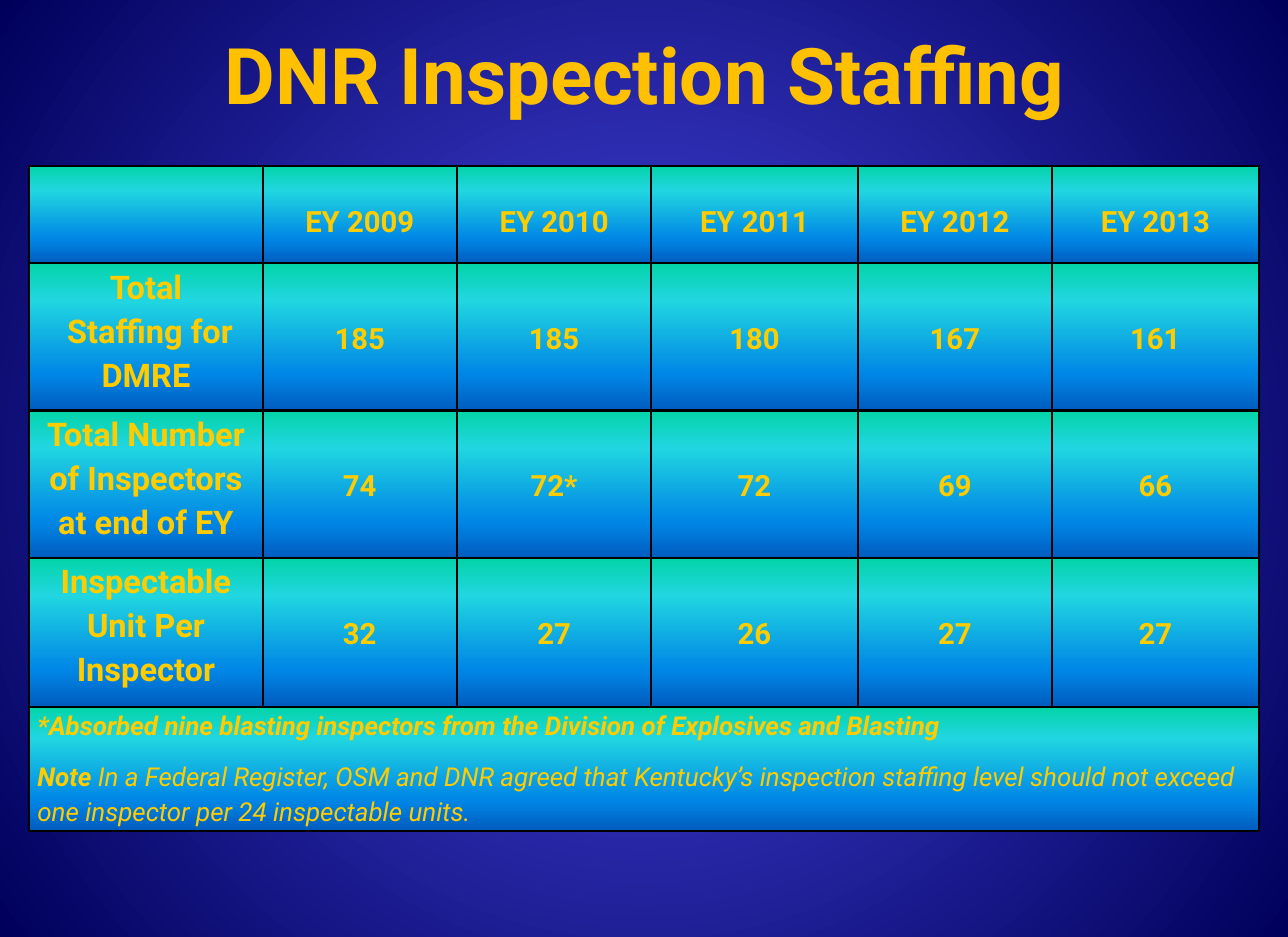
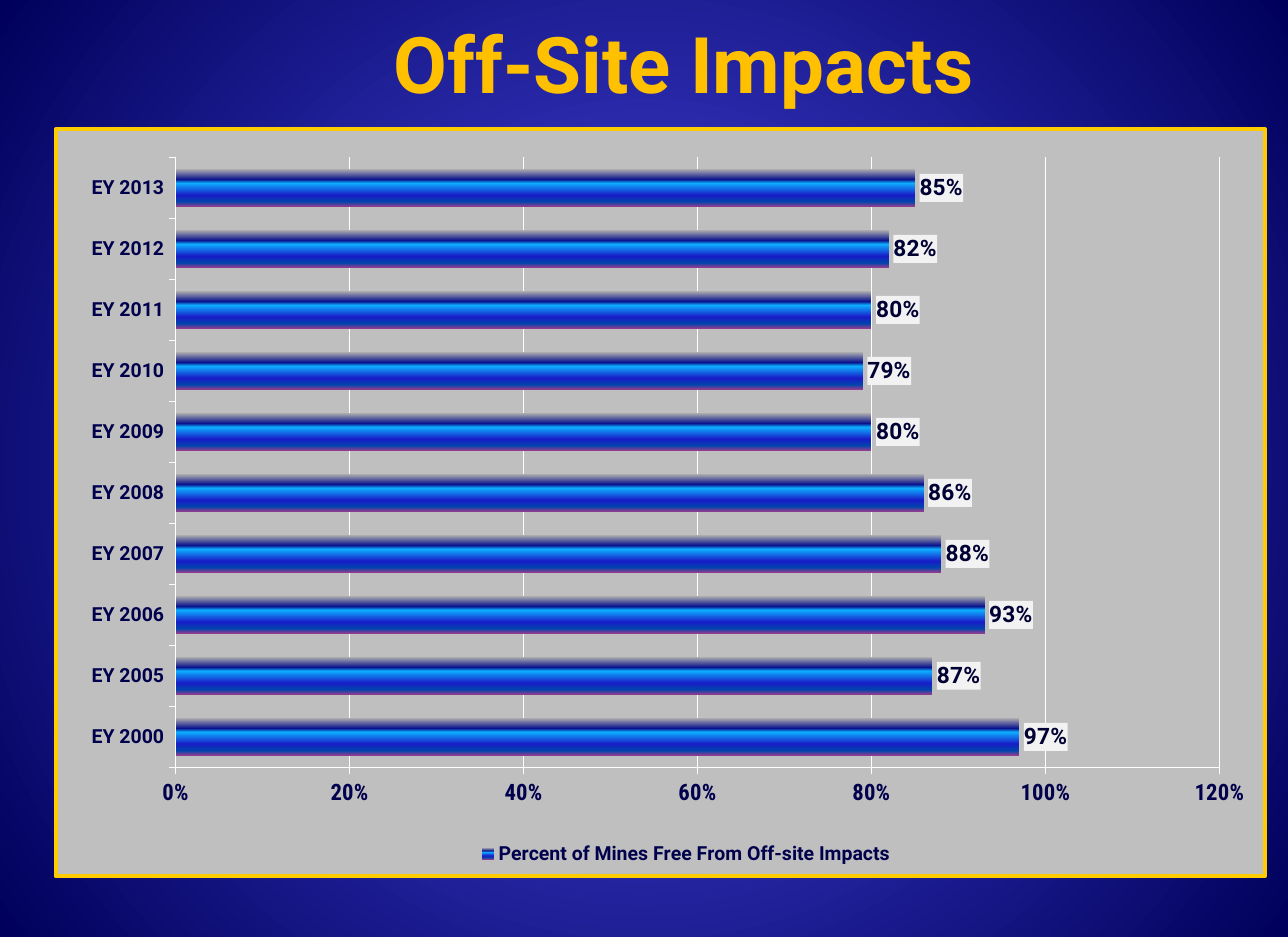
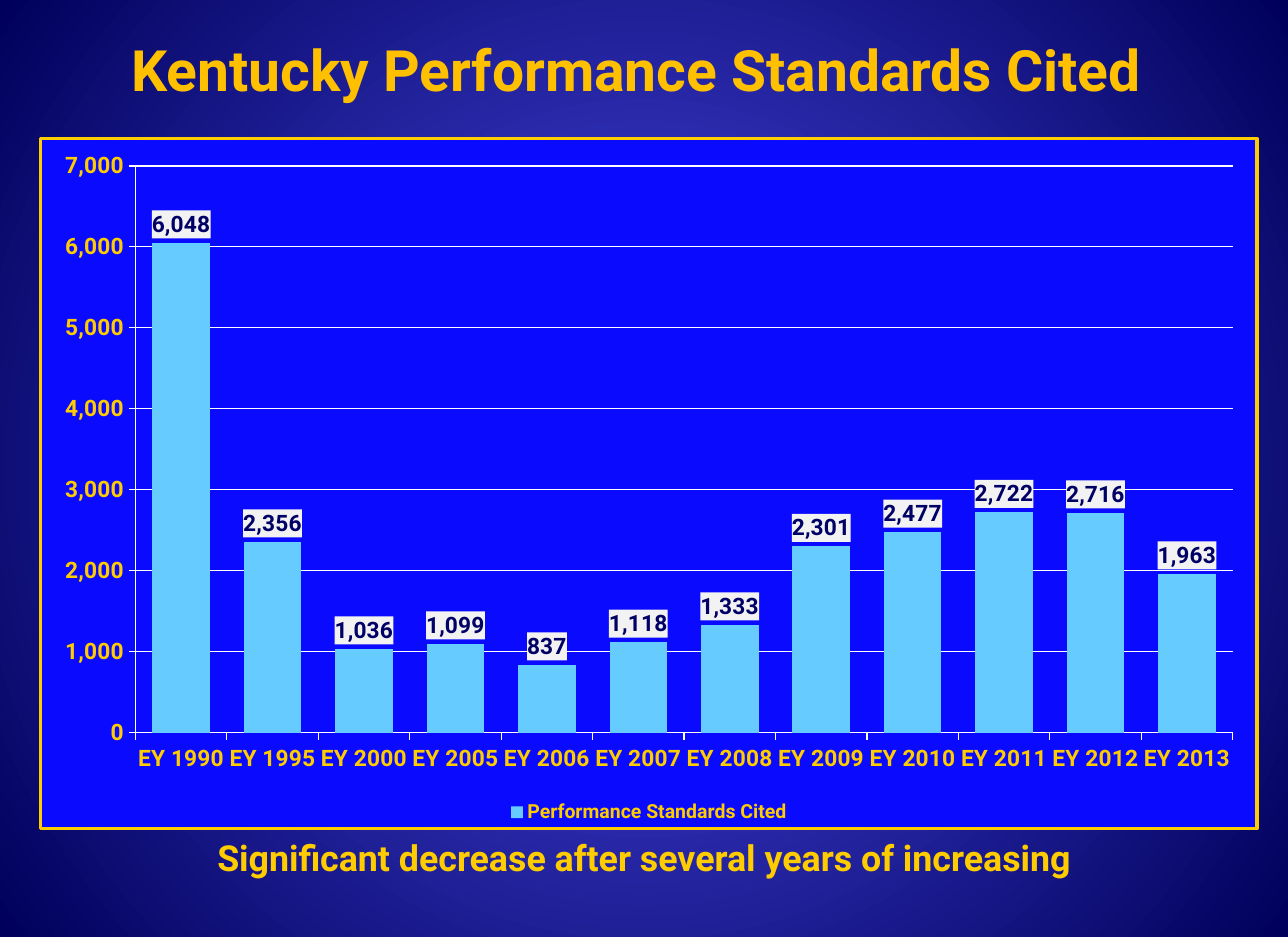
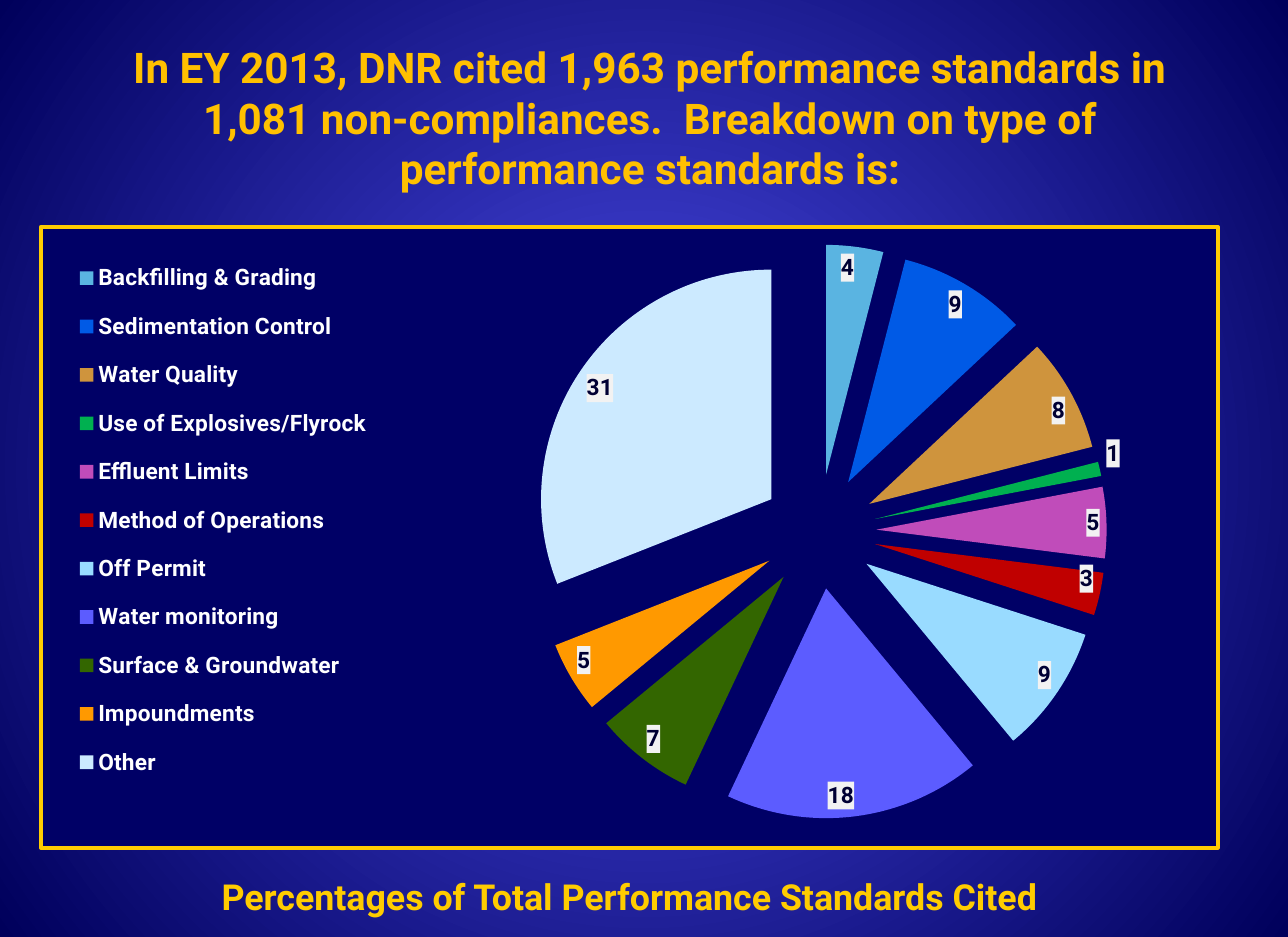
from pptx import Presentation
from pptx.chart.data import CategoryChartData
from pptx.dml.color import RGBColor
from pptx.enum.chart import XL_CHART_TYPE, XL_LABEL_POSITION, XL_LEGEND_POSITION, XL_TICK_MARK
from pptx.enum.text import MSO_ANCHOR, PP_ALIGN
from pptx.oxml import parse_xml
from pptx.oxml.ns import nsdecls, qn
from pptx.util import Pt

FONT = "Roboto"
COLORS = {
    "title": "FFC000", "gold": "FFCC00", "white": "FFFFFF", "black": "000000",
    "label_box": "F2F2F2", "label": "000033", "navy": "00004D", "deep": "000066",
    "grey": "BFBFBF", "blue": "0A0AFF", "sky": "66CCFF",
}
DOWN = '<a:lin ang="5400000" scaled="0"/>'
CENTRE = '<a:path path="circle"><a:fillToRect l="50000" t="50000" r="50000" b="50000"/></a:path>'
GRADIENT_STOPS = {
    "background": (CENTRE, [(0, "4A4AE9"), (100, "00005B")]),
    "cell": (DOWN, [(0, "03D4A8"), (25, "21D6E0"), (75, "0087E6"), (100, "005CBF")]),
    "bar": (DOWN, [(0, "B0B0B0"), (28, "0A128C"), (38, "0DAEFF"),
                   (70, "181CC7"), (88, "0045AD"), (100, "8C3D91")]),
}
GRADIENTS = {}
for name, (direction, stops) in GRADIENT_STOPS.items():
    gs = "".join(f'<a:gs pos="{pos * 1000}"><a:srgbClr val="{ink}"/></a:gs>' for pos, ink in stops)
    GRADIENTS[name] = (f'<a:gradFill {nsdecls("a")} rotWithShape="1">'
                       f'<a:gsLst>{gs}</a:gsLst>{direction}</a:gradFill>')
LAYOUT = (f'<c:layout {nsdecls("c")}><c:manualLayout>{{target}}'
          '<c:xMode val="edge"/><c:yMode val="edge"/><c:x val="{x:.4f}"/><c:y val="{y:.4f}"/>'
          '<c:w val="{w:.4f}"/><c:h val="{h:.4f}"/></c:manualLayout></c:layout>')
LABEL_BOX = (f'<c:spPr {nsdecls("c", "a")}><a:solidFill>'
             f'<a:srgbClr val="{COLORS["label_box"]}"/></a:solidFill></c:spPr>')


def add_line(s, text, box, size, ink="title", anchor=MSO_ANCHOR.MIDDLE):
    """Add a centred bold text box; box is left, top, width, height in points."""
    tf = s.shapes.add_textbox(*map(Pt, box)).text_frame
    tf.word_wrap = True
    tf.vertical_anchor = anchor
    tf.text = text
    p = tf.paragraphs[0]
    p.alignment = PP_ALIGN.CENTER
    font = p.runs[0].font
    font.name, font.size, font.bold = FONT, Pt(size), True
    font.color.rgb = RGBColor.from_string(COLORS[ink])


def add_framed_chart(s, kind, box, name, points, fill, border, plot_box, ink,
                     label_ink, legend_size, legend_at, fmt, label_at, legend_box=None):
    """Add a one-series chart with a gold frame and boxed value labels.

    plot_box and legend_box are in points from the chart's corner.
    """
    data = CategoryChartData(number_format=fmt)
    data.categories = list(points)
    data.add_series(name, list(points.values()))
    chart = s.shapes.add_chart(kind, *map(Pt, box), data).chart
    chart.has_title = False
    chart.font.name, chart.font.size = FONT, Pt(10)
    chart.font.color.rgb = RGBColor.from_string(COLORS["white"])
    chart._chartSpace.chart.addnext(parse_xml(
        f'<c:spPr {nsdecls("c", "a")}><a:solidFill><a:srgbClr val="{COLORS[fill]}"/></a:solidFill>'
        f'<a:ln w="{Pt(border)}"><a:solidFill><a:srgbClr val="{COLORS["gold"]}"/></a:solidFill>'
        '</a:ln></c:spPr>'))

    chart.has_legend = True
    chart.legend.position = legend_at
    chart.legend.include_in_layout = False
    plot_area, legend = chart._chartSpace.chart.plotArea, chart.legend._element
    for part, index, area, target in (
            (plot_area, 0, plot_box, '<c:layoutTarget val="inner"/>'),
            (legend, 1, legend_box, "")):
        if area:
            for old in part.findall(qn("c:layout")):
                part.remove(old)
            x, y, w, h = area
            part.insert(index, parse_xml(LAYOUT.format(
                target=target, x=x / box[2], y=y / box[3], w=w / box[2], h=h / box[3])))

    labels = chart.plots[0].series[0].data_labels
    labels.show_value = True
    labels.number_format, labels.number_format_is_linked = fmt, False
    labels.position = label_at
    for font, size, color in ((chart.legend.font, legend_size, ink), (labels.font, 14, label_ink)):
        font.name, font.size, font.bold = FONT, Pt(size), True
        font.color.rgb = RGBColor.from_string(COLORS[color])
    labels._element.find(qn("c:txPr")).addprevious(parse_xml(LABEL_BOX))
    return chart


prs = Presentation()
prs.slide_width, prs.slide_height = Pt(792), Pt(576)
prs.slide_master.background.fill.solid()
bg = prs.slide_master._element.find(".//" + qn("p:bgPr"))
bg.replace(bg.find(qn("a:solidFill")), parse_xml(GRADIENTS["background"]))
staffing, impacts, cited, breakdown = [prs.slides.add_slide(prs.slide_layouts[6]) for _ in range(4)]

# Slide 1: staffing table
add_line(staffing, "DNR Inspection Staffing", (53.5, 0, 686, 90), 48)
ROWS = [
    ["", "EY 2009", "EY 2010", "EY 2011", "EY 2012", "EY 2013"],
    ["Total\n Staffing for DMRE", "185", "185", "180", "167", "161"],
    ["Total Number of Inspectors at end of EY", "74", "72*", "72", "69", "66"],
    ["Inspectable Unit Per\nInspector", "32", "27", "26", "27", "27"],
    [""] * 6,
]
NOTES = [
    [("*Absorbed nine blasting inspectors from the Division of Explosives and Blasting", True)],
    [("Note", True),
     (" In a Federal Register, OSM and DNR agreed that Kentucky’s inspection staffing level "
      "should not exceed one inspector per 24 inspectable units.", False)],
]
table = staffing.shapes.add_table(5, 6, Pt(18), Pt(102), Pt(756), Pt(406.5)).table
for column, width in zip(table.columns, (143.5, 119.5, 119.5, 127, 119.5, 127)):
    column.width = Pt(width)
for row, height in zip(table.rows, (59.8, 90.6, 90.6, 91.5, 74)):
    row.height = Pt(height)
for i, texts in enumerate(ROWS):
    for j, text in enumerate(texts):
        cell = table.cell(i, j)
        cell.margin_left = cell.margin_right = Pt(5)
        cell.margin_top = cell.margin_bottom = 0
        if i == 0:
            cell.vertical_anchor, cell.margin_bottom = MSO_ANCHOR.BOTTOM, Pt(14.5)
        elif j and i < 4:
            cell.vertical_anchor = MSO_ANCHOR.MIDDLE
        if text:
            cell.text_frame.text = text
        for p in cell.text_frame.paragraphs:
            p.alignment, p.line_spacing = PP_ALIGN.CENTER, 1.15
            for r in p.runs:
                r.font.name, r.font.size, r.font.bold = FONT, Pt(18 if j else 20), True
                r.font.color.rgb = RGBColor.from_string(COLORS["gold"])
        props = cell._tc.get_or_add_tcPr()
        for side in "LRTB":
            props.append(parse_xml(
                f'<a:ln{side} {nsdecls("a")} w="{Pt(1.5)}"><a:solidFill>'
                f'<a:srgbClr val="{COLORS["black"]}"/></a:solidFill></a:ln{side}>'))
        props.append(parse_xml(GRADIENTS["cell"]))
note = table.cell(4, 0)
note.merge(table.cell(4, 5))
for k, runs in enumerate(NOTES):
    p = note.text_frame.add_paragraph() if k else note.text_frame.paragraphs[0]
    p.alignment, p.line_spacing, p.space_after = PP_ALIGN.LEFT, 1.15, Pt(10)
    for text, bold in runs:
        r = p.add_run()
        r.text = text
        r.font.name, r.font.size, r.font.bold, r.font.italic = FONT, Pt(16), bold, True
        r.font.color.rgb = RGBColor.from_string(COLORS["gold"])

# Slides 2 and 3: bar and column charts
add_line(impacts, "Off-Site Impacts", (77.5, 0, 686, 76), 48)
IMPACT_FREE = {"EY 2000": 0.97, "EY 2005": 0.87, "EY 2006": 0.93, "EY 2007": 0.88,
               "EY 2008": 0.86, "EY 2009": 0.8, "EY 2010": 0.79, "EY 2011": 0.8,
               "EY 2012": 0.82, "EY 2013": 0.85}
impact_chart = add_framed_chart(
    impacts, XL_CHART_TYPE.BAR_CLUSTERED, (33, 78, 746, 462),
    "Percent of Mines Free From Off-site Impacts", IMPACT_FREE, "grey", 2.5,
    (74, 17.6, 644, 377), "navy", "label", 12, XL_LEGEND_POSITION.BOTTOM, "0%",
    XL_LABEL_POSITION.OUTSIDE_END, (239, 436, 300, 24))
bars = impact_chart.plots[0].series[0]
bars._element.get_or_add_spPr().insert(0, parse_xml(GRADIENTS["bar"]))

add_line(cited, "Kentucky Performance Standards Cited", (0, 0, 783, 84), 35)
add_line(cited, "Significant decrease after several years of increasing",
         (46, 510, 700, 34), 22, "gold", MSO_ANCHOR.TOP)
STANDARDS = {"EY 1990": 6048, "EY 1995": 2356, "EY 2000": 1036, "EY 2005": 1099,
             "EY 2006": 837, "EY 2007": 1118, "EY 2008": 1333, "EY 2009": 2301,
             "EY 2010": 2477, "EY 2011": 2722, "EY 2012": 2716, "EY 2013": 1963}
cited_chart = add_framed_chart(
    cited, XL_CHART_TYPE.COLUMN_CLUSTERED, (24, 84.3, 750, 426),
    "Performance Standards Cited", STANDARDS, "blue", 2,
    (58.4, 16.8, 676.6, 350.2), "gold", "deep", 12, XL_LEGEND_POSITION.BOTTOM, "#,##0",
    XL_LABEL_POSITION.OUTSIDE_END)
columns = cited_chart.plots[0].series[0]
columns.format.fill.solid()
columns.format.fill.fore_color.rgb = RGBColor.from_string(COLORS["sky"])

for chart, gap, top, step, fmt, ink, cat_size, value_font in (
        (impact_chart, 64, 1.2, 0.2, "0%", "navy", 12, "Roboto Condensed"),
        (cited_chart, 59, 7000, 1000, "#,##0", "gold", 14, FONT)):
    chart.plots[0].gap_width = gap
    chart.plots[0].vary_by_categories = False
    value_axis = chart.value_axis
    value_axis.minimum_scale, value_axis.maximum_scale, value_axis.major_unit = 0, top, step
    value_axis.tick_labels.number_format = fmt
    value_axis.tick_labels.number_format_is_linked = False
    value_axis.has_major_gridlines = True
    for axis, size, font_name in ((chart.category_axis, cat_size, FONT),
                                  (value_axis, 14, value_font)):
        axis.major_tick_mark = XL_TICK_MARK.OUTSIDE
        font = axis.tick_labels.font
        font.name, font.size, font.bold = font_name, Pt(size), True
        font.color.rgb = RGBColor.from_string(COLORS[ink])
    for line in (chart.category_axis.format.line, value_axis.format.line,
                 value_axis.major_gridlines.format.line):
        line.width = Pt(0.75)
        line.color.rgb = RGBColor.from_string(COLORS["white"])

# Slide 4: exploded pie
add_line(breakdown, "In EY 2013, DNR cited 1,963 performance standards in 1,081 non-compliances.  "
         "Breakdown on type of performance standards is:", (54, 12, 692, 120), 26)
add_line(breakdown, "Percentages of Total Performance Standards Cited",
         (30, 534, 714, 34), 22, "gold", MSO_ANCHOR.TOP)
SLICES = {
    "Backfilling & Grading": (4, "5AB4E1"), "Sedimentation Control": (9, "005AE6"),
    "Water Quality": (8, "CF943D"), "Use of Explosives/Flyrock": (1, "00B050"),
    "Effluent Limits": (5, "C04CBA"), "Method of Operations": (3, "C00000"),
    "Off Permit": (9, "99DBFF"), "Water monitoring": (18, "5C5CFF"),
    "Surface & Groundwater": (7, "336600"), "Impoundments": (5, "FF9900"),
    "Other": (31, "CCEAFF"),
}
pie_chart = add_framed_chart(
    breakdown, XL_CHART_TYPE.PIE, (24, 138.3, 726, 384), "Series 1",
    {kind: value for kind, (value, _) in SLICES.items()}, "deep", 2.25,
    (259, 11, 442, 355), "white", "label", 14, XL_LEGEND_POSITION.LEFT, "General",
    XL_LABEL_POSITION.INSIDE_END, (14.5, 10.5, 196, 342))
pie_chart.plots[0].vary_by_categories = True
pie = pie_chart.plots[0].series[0]
for i, (_, ink) in enumerate(SLICES.values()):
    fill = pie.points[i].format.fill
    fill.solid()
    fill.fore_color.rgb = RGBColor.from_string(ink)
pie._element.find(qn("c:tx")).addnext(parse_xml(f'<c:explosion {nsdecls("c")} val="25"/>'))
thin_label = pie.points[3].data_label
thin_label.position = XL_LABEL_POSITION.OUTSIDE_END
font = thin_label.font
font.name, font.size, font.bold = FONT, Pt(14), True
font.color.rgb = RGBColor.from_string(COLORS["label"])
pie._element.find(".//" + qn("c:dLbl")).find(qn("c:txPr")).addprevious(parse_xml(LABEL_BOX))

prs.save("out.pptx")
